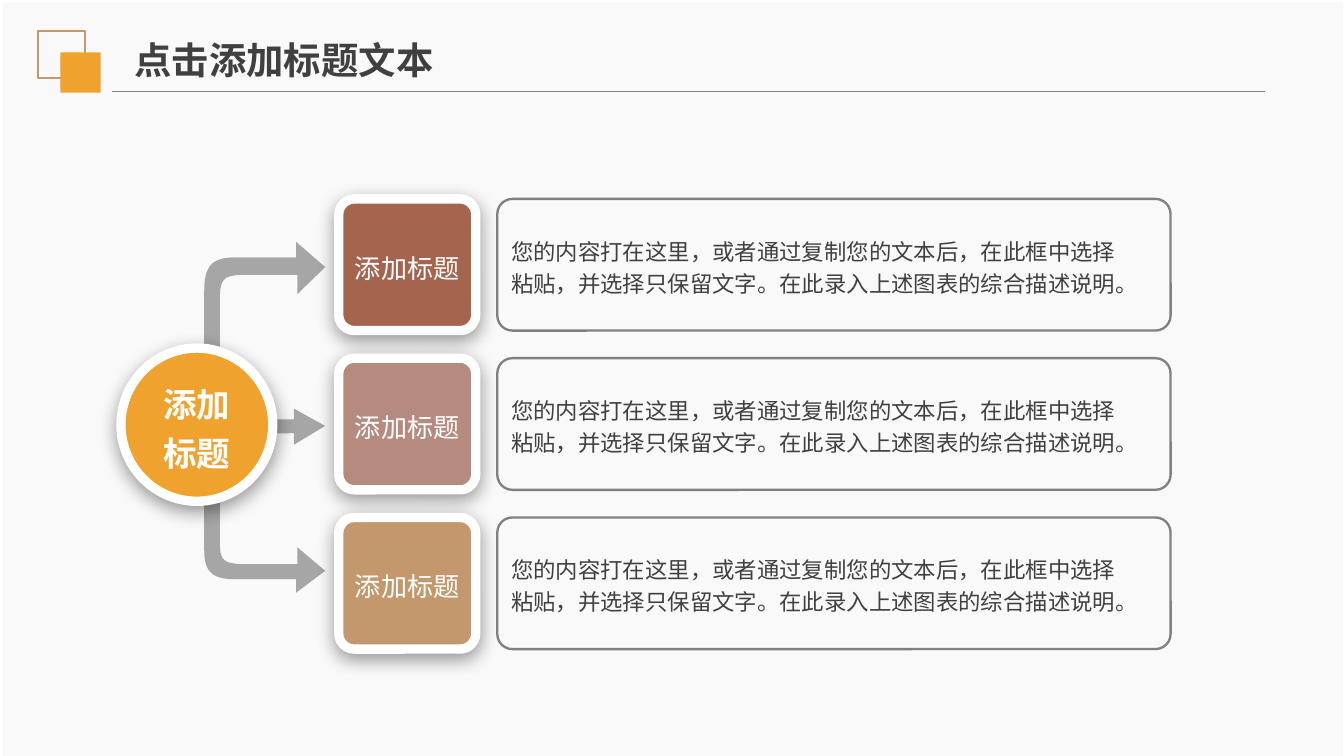
from lxml.etree import SubElement
from pptx import Presentation
from pptx.dml.color import RGBColor
from pptx.enum.shapes import MSO_CONNECTOR, MSO_SHAPE
from pptx.enum.text import MSO_ANCHOR, PP_ALIGN
from pptx.oxml.ns import qn
from pptx.util import Inches, Pt

FONT = "Noto Sans CJK SC"
COLORS = {
    "page": "F3F3F3", "white": "FFFFFF", "text": "404040", "rule": "808080",
    "arrow": "A6A6A6", "orange": "F0A22E", "rust": "A5644E",
    "rose": "B58B80", "sand": "C3986D", "black": "000000",
}
DESCRIPTION = [
    "您的内容打在这里，或者通过复制您的文本后，在此框中选择",
    "粘贴，并选择只保留文字。在此录入上述图表的综合描述说明。",
]
# Outline of an elbow arrow in fractions of its box; six numbers make a curve
ELBOW = [
    (0.13, 0.88), (0.13, 0.28), (0.13, 0.18, 0.19, 0.18, 0.28, 0.17),
    (0.77, 0.17), (0.77, 0.27), (1, 0.13), (0.76, 0), (0.76, 0.08),
    (0.25, 0.08), (0.06, 0.08, 0, 0.13, 0, 0.25), (0, 0.9),
    (0.02, 1, 0.1, 1, 0.13, 0.88),
]
STRAIGHT = [(0, 0.3), (0.78, 0.3), (0.78, 0), (1, 0.48),
            (0.78, 1), (0.78, 0.68), (0, 0.72)]


def color(name):
    return RGBColor.from_string(COLORS[name])


def write(shape, lines, size, ink="text", bold=False, align=PP_ALIGN.LEFT,
          anchor=MSO_ANCHOR.MIDDLE, spacing=1.2, wrap=True, inset=(0.07, 0.03)):
    frame = shape.text_frame
    frame.word_wrap = wrap
    frame.vertical_anchor = anchor
    frame.margin_left = frame.margin_right = Inches(inset[0])
    frame.margin_top = frame.margin_bottom = Inches(inset[1])
    for index, line in enumerate(lines):
        para = frame.add_paragraph() if index else frame.paragraphs[0]
        para.alignment = align
        para.line_spacing = spacing
        para.space_before = Pt(0)
        span = para.add_run()
        span.text = line
        span.font.size = Pt(size)
        span.font.bold = bold
        span.font.color.rgb = color(ink)
        span.font.name = FONT
        SubElement(span.font._element, qn("a:ea"), typeface=FONT)


def paint(shape, fill=None, line=None, width=1):
    shape.shadow.inherit = False
    if fill:
        shape.fill.solid()
        shape.fill.fore_color.rgb = color(fill)
    else:
        shape.fill.background()
    if line:
        shape.line.color.rgb = color(line)
        shape.line.width = Pt(width)
    else:
        shape.line.fill.background()


def add_box(page, kind, box, radius=None, **style):
    shape = page.shapes.add_shape(kind, *map(Inches, box))
    if radius is not None:
        shape.adjustments[0] = radius
    paint(shape, **style)
    return shape


def add_soft_shadow(shape):
    effects = shape._element.spPr.find(qn("a:effectLst"))
    shadow = SubElement(effects, qn("a:outerShdw"), blurRad=str(Pt(10)),
                        dist=str(Pt(3)), dir="5400000", algn="t", rotWithShape="0")
    shade = SubElement(shadow, qn("a:srgbClr"), val=COLORS["black"])
    SubElement(shade, qn("a:alpha"), val="40000")


def flatten(outline, steps=12):
    """Turn an outline with Bezier curves into plain points."""
    points = []
    for part in outline:
        if len(part) == 2:
            points.append(part)
            continue
        corners = [points[-1], part[0:2], part[2:4], part[4:6]]
        for step in range(1, steps + 1):
            t = step / steps
            weights = ((1 - t) ** 3, 3 * t * (1 - t) ** 2, 3 * t * t * (1 - t), t ** 3)
            points.append(tuple(sum(w * corner[axis] for w, corner in zip(weights, corners))
                                for axis in (0, 1)))
    return points


def add_arrow(page, box, outline, flipped=False):
    left, top, width, height = box
    points = [(Inches(left + u * width), Inches(top + (1 - v if flipped else v) * height))
              for u, v in flatten(outline)]
    builder = page.shapes.build_freeform(*points[0])
    builder.add_line_segments(points[1:], close=True)
    paint(builder.convert_to_shape(), fill="arrow")


def add_backdrop(page, box):
    page.background.fill.solid()
    page.background.fill.fore_color.rgb = color("page")
    veil = add_box(page, MSO_SHAPE.RECTANGLE, box, fill="white", line="white", width=2)
    tint = veil._element.spPr.find(qn("a:solidFill"))[0]
    SubElement(tint, qn("a:alpha"), val="58000")


def add_header(page, box, text):
    left, top, width, height = box
    rule = page.shapes.add_connector(
        MSO_CONNECTOR.STRAIGHT, Inches(left + 0.55), Inches(top + height),
        Inches(left + width), Inches(top + height))
    rule.line.color.rgb = color("rule")
    rule.line.width = Pt(0.75)
    SubElement(rule._element.spPr, qn("a:effectLst"))
    add_box(page, MSO_SHAPE.RECTANGLE, (left, top, 0.35, 0.35), line="sand")
    add_box(page, MSO_SHAPE.RECTANGLE, (left + 0.17, top + 0.16, 0.3, 0.3), fill="orange")
    # The title goes in front of the backdrop
    title = page.shapes.title
    title.left, title.top = Inches(left + 0.62), Inches(top)
    title.width, title.height = Inches(2.45), Inches(0.44)
    page.shapes._spTree.append(title._element)
    write(title, [text], 20, bold=True, anchor=MSO_ANCHOR.TOP, spacing=1.0,
          wrap=False, inset=(0.1, 0.05))


def add_row(page, box, fill):
    left, top, width, height = box
    panel = add_box(page, MSO_SHAPE.ROUNDED_RECTANGLE,
                    (left + 1.18, top, width - 1.18, height),
                    radius=0.115, line="rule", width=1.25)
    write(panel, DESCRIPTION, 12)
    tile = add_box(page, MSO_SHAPE.ROUNDED_RECTANGLE, (left, top, 1.02, height),
                   radius=0.119, fill=fill, line="white", width=5)
    add_soft_shadow(tile)
    write(tile, ["添加标题"], 14, ink="white", align=PP_ALIGN.CENTER)


def add_diagram(page, box):
    left, top, width, height = box
    # Arrows from the hub to the rows
    add_arrow(page, (left + 0.62, top + 1.68, 0.9, 1.25), ELBOW, flipped=True)
    add_arrow(page, (left + 0.46, top + 1.56, 1.06, 0.27), STRAIGHT)
    add_arrow(page, (left + 0.62, top + 0.32, 0.9, 1.44), ELBOW)
    # Rows at an equal pitch
    row_height = 0.98
    pitch = (height - row_height) / 2
    for index, fill in enumerate(("rust", "rose", "sand")):
        add_row(page, (left + 1.62, top + index * pitch, width - 1.62, row_height), fill)
    # Hub
    hub = add_box(page, MSO_SHAPE.OVAL, (left, top + 1.11, 1.13, 1.14),
                  fill="orange", line="white", width=5)
    add_soft_shadow(hub)
    write(hub, ["添加标题"], 18, ink="white", bold=True, align=PP_ALIGN.CENTER)


def main():
    deck = Presentation()
    # A page of 16 to 9
    deck.slide_width, deck.slide_height = Inches(10), Inches(10 * 9 / 16)
    page = deck.slides.add_slide(deck.slide_layouts[5])
    add_backdrop(page, (0.01, 0, 10, 5.65))
    add_header(page, (0.28, 0.23, 9.13, 0.45), "点击添加标题文本")
    add_diagram(page, (0.9, 1.48, 7.81, 3.35))
    deck.save("out.pptx")


if __name__ == "__main__":
    main()
